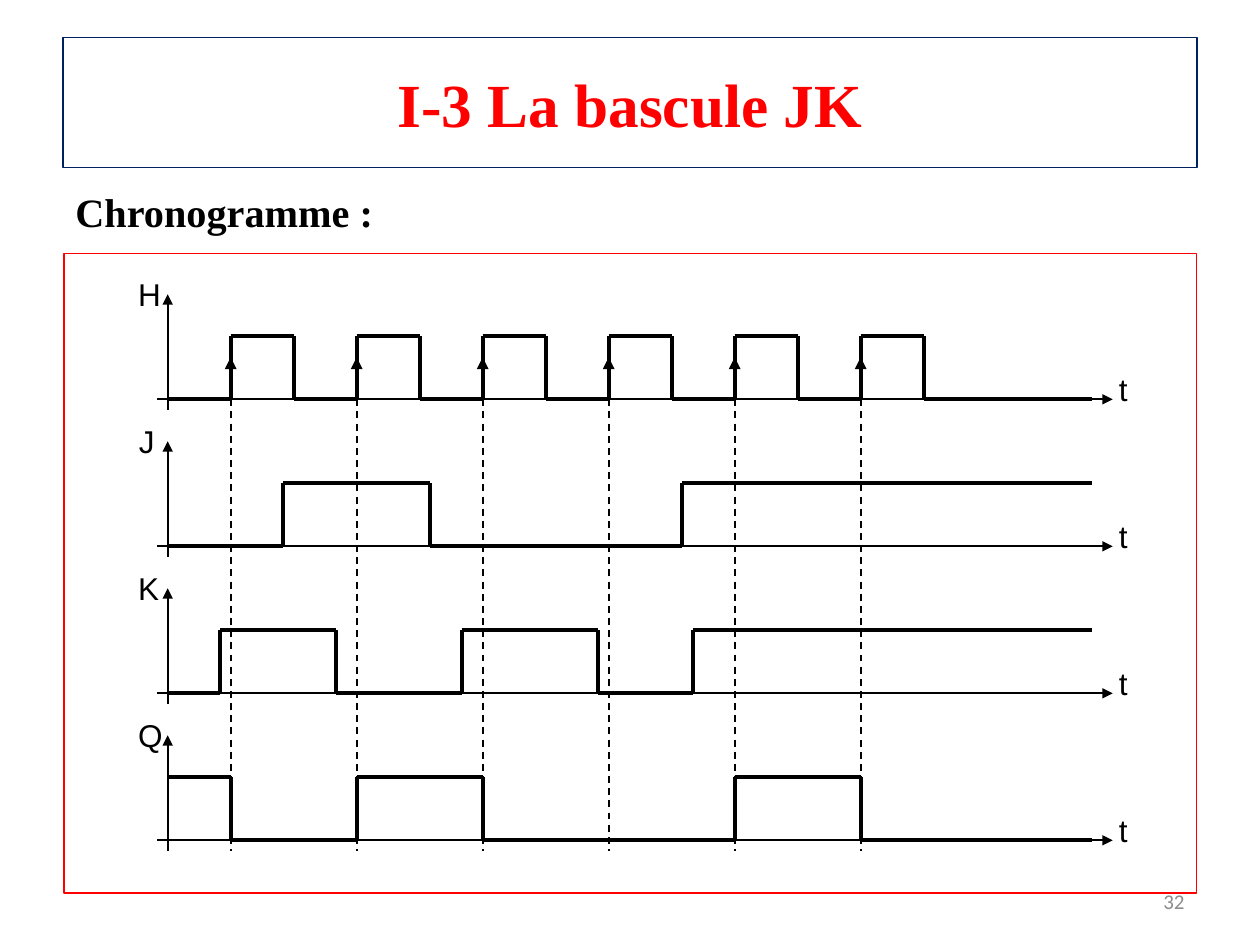
from itertools import pairwise

from lxml.etree import SubElement
from pptx import Presentation
from pptx.dml.color import RGBColor
from pptx.enum.dml import MSO_LINE
from pptx.enum.shapes import MSO_CONNECTOR, MSO_SHAPE
from pptx.enum.text import MSO_ANCHOR as Anchor, PP_ALIGN as Align
from pptx.oxml.ns import qn
from pptx.util import Cm, Pt

TICK = 2.54 / 12  # grid step of the diagram, in cm
HIGH = 6          # height of a pulse, in ticks
ROW_GAP = 14      # distance between two time axes
END = 88          # end of the signals
CLOCK_EDGES = list(range(6, 73, 6))
RISING_EDGES = CLOCK_EDGES[::2]

# Name, starts high, times of the level changes
SIGNALS = [
    ("H", False, CLOCK_EDGES),
    ("J", False, [11, 25, 49]),
    ("K", False, [5, 16, 28, 41, 50]),
    ("Q", True, [6, 18, 30, 54, 66]),
]


def colour(value):
    return RGBColor.from_string(value)


def add_text(page, box, text, font, size, hue="000000", bold=False,
             align=Align.LEFT, anchor=Anchor.MIDDLE, wrap=True):
    frame = page.shapes.add_textbox(*map(Cm, box)).text_frame
    frame.word_wrap = wrap
    frame.vertical_anchor = anchor
    para = frame.paragraphs[0]
    para.text = text
    para.alignment = align
    para.font.name = font
    para.font.size = Pt(size)
    para.font.bold = bold
    para.font.color.rgb = colour(hue)


def add_frame(page, box, hue, width):
    frame = page.shapes.add_shape(MSO_SHAPE.RECTANGLE, *map(Cm, box))
    frame.shadow.inherit = False
    frame.fill.background()
    frame.line.color.rgb = colour(hue)
    frame.line.width = Pt(width)


def add_line(page, origin, start, end, width=1, arrow=False, dashed=False):
    """Draw a line between two points given in ticks from the origin."""
    points = [Cm(base + step * TICK)
              for point in (start, end) for base, step in zip(origin, point)]
    line = page.shapes.add_connector(MSO_CONNECTOR.STRAIGHT, *points)
    line.line.color.rgb = colour("000000")
    line.line.width = Pt(width)
    if dashed:
        line.line.dash_style = MSO_LINE.DASH
    if arrow:
        SubElement(line.line._get_or_add_ln(), qn("a:tailEnd"), type="triangle")
    SubElement(line._element.spPr, qn("a:effectLst"))


def add_axes(page, origin, name):
    add_line(page, origin, (0, 1), (0, -10), arrow=True)
    add_line(page, origin, (-1, 0), (90, 0), arrow=True)
    left, top = origin
    for label, across, down in ((name, -4, -12), ("t", 89, -3)):
        box = (left + across * TICK, top + down * TICK, 4 * TICK, 4 * TICK)
        add_text(page, box, label, "Arial", 18, align=Align.CENTER, wrap=False)


def add_signal(page, origin, starts_high, edges):
    level = -HIGH if starts_high else 0
    for start, end in pairwise([0, *edges, END]):
        add_line(page, origin, (start, level), (end, level), 2.25)
        if end != END:
            add_line(page, origin, (end, -HIGH), (end, 0), 2.25)
        level = -HIGH - level


def add_timing_diagram(page, box):
    add_frame(page, box, "FF0000", 1)
    left, top = box[0] + 2.09, box[1] + 2.94
    for row, (name, starts_high, edges) in enumerate(SIGNALS):
        origin = (left, top + row * ROW_GAP * TICK)
        add_axes(page, origin, name)
        add_signal(page, origin, starts_high, edges)
    # Active clock edges, carried down to the last signal
    bottom = (len(SIGNALS) - 1) * ROW_GAP + 1
    for time in RISING_EDGES:
        add_line(page, (left, top), (time, 0), (time, bottom), dashed=True)
        add_line(page, (left, top), (time, 0), (time, -4), 2.25, arrow=True)


def add_title(page, box):
    add_frame(page, box, "002060", 0.75)
    add_text(page, box, "I-3 La bascule JK", "Times New Roman", 35, "FF0000",
             bold=True, align=Align.CENTER)


def main():
    deck = Presentation()
    deck.slide_width, deck.slide_height = Cm(25.4), Cm(19.05)
    page = deck.slides.add_slide(deck.slide_layouts[6])
    add_title(page, (1.27, 0.76, 22.86, 2.62))
    add_text(page, (1.27, 3.66, 22.86, 1.47), "Chronogramme :",
             "Times New Roman", 23, bold=True, anchor=Anchor.TOP)
    add_timing_diagram(page, (1.29, 5.11, 22.83, 12.9))
    # Page number
    add_text(page, (18.21, 17.65, 5.92, 1.02), "32", "Calibri", 12, "8C8C8C",
             align=Align.RIGHT)
    deck.save("out.pptx")


if __name__ == "__main__":
    main()
